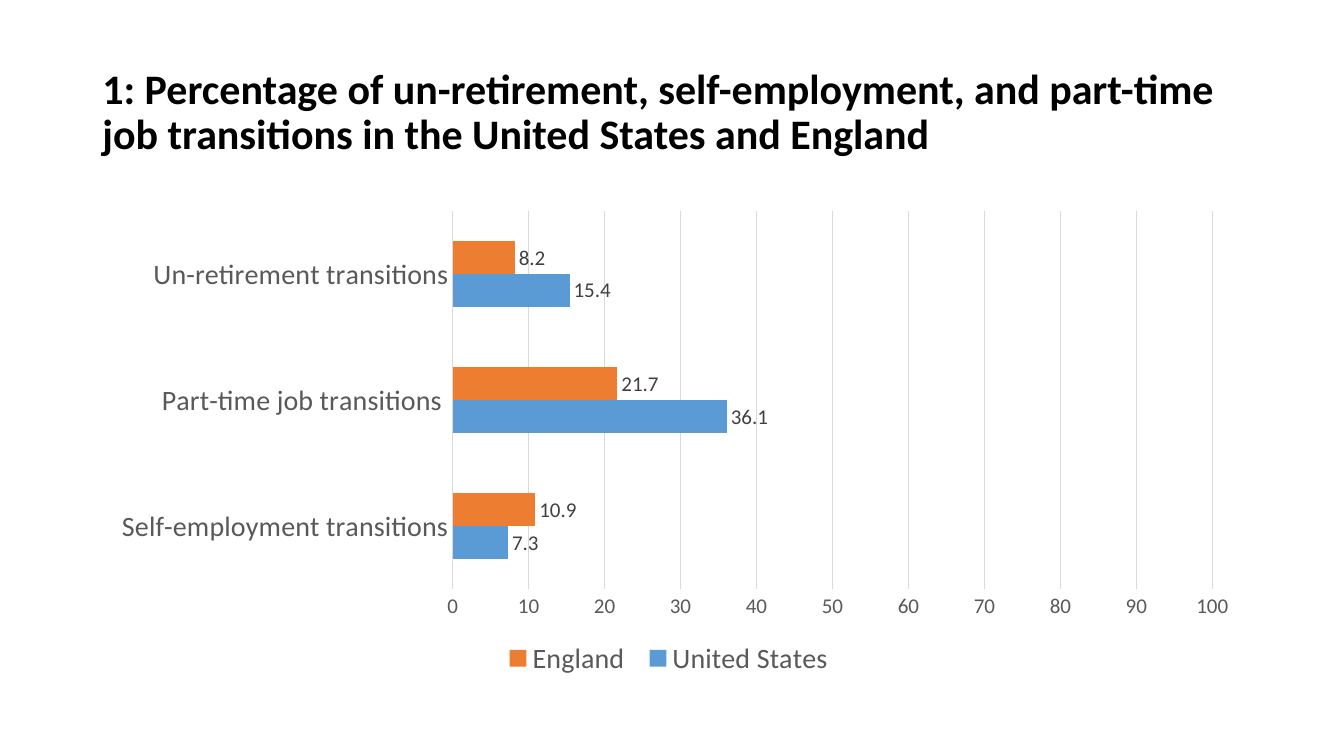
import pptx
import pptx.chart.data
import pptx.dml.color
import pptx.enum.chart
import pptx.enum.text
import pptx.util

Pt = pptx.util.Pt
FONT = "Calibri"
COLORS = {
    "title": "000000",
    "axis": "595959",
    "label": "404040",
    "grid": "D9D9D9",
    "us": "5B9BD5",
    "england": "ED7D31",
}
CATEGORIES = [" Self-employment transitions", "Part-time job transitions ", "Un-retirement transitions"]
SERIES = [
    ("United States ", (7.3, 36.1, 15.4), "us"),
    ("England ", (10.9, 21.7, 8.2), "england"),
]


def rgb(name):
    return pptx.dml.color.RGBColor.from_string(COLORS[name])


def set_font(font, size, color, bold=False):
    font.name = FONT
    font.size = Pt(size)
    font.bold = bold
    font.color.rgb = rgb(color)


prs = pptx.Presentation()
prs.slide_width, prs.slide_height = Pt(960), Pt(540)
s = prs.slides.add_slide(prs.slide_layouts[5])

# Title
title = s.shapes.title
title.left, title.top, title.width, title.height = Pt(66), Pt(28.75), Pt(828), Pt(104.4)
tf = title.text_frame
tf.text = ("1: Percentage of un-retirement, self-employment, and part-time "
           "job transitions in the United States and England")
tf.word_wrap = True
tf.auto_size = pptx.enum.text.MSO_AUTO_SIZE.NONE
tf.vertical_anchor = pptx.enum.text.MSO_ANCHOR.MIDDLE
p = tf.paragraphs[0]
p.alignment = pptx.enum.text.PP_ALIGN.LEFT
p.line_spacing = 0.9
set_font(p.font, 30, "title", bold=True)

# Bar chart
data = pptx.chart.data.CategoryChartData()
data.categories = CATEGORIES
for name, values, color in SERIES:
    data.add_series(name, values)
chart = s.shapes.add_chart(
    pptx.enum.chart.XL_CHART_TYPE.BAR_CLUSTERED,
    Pt(66), Pt(144), Pt(828), Pt(342.6), data).chart
chart.has_title = False
set_font(chart.font, 10, "title")

plot = chart.plots[0]
plot.gap_width = 182
plot.overlap = 0
plot.vary_by_categories = False
for series, (name, values, color) in zip(plot.series, SERIES):
    series.format.fill.solid()
    series.format.fill.fore_color.rgb = rgb(color)
    labels = series.data_labels
    labels.show_value = True
    labels.position = pptx.enum.chart.XL_LABEL_POSITION.OUTSIDE_END
    set_font(labels.font, 15, "label")

# Axes
cat_axis, val_axis = chart.category_axis, chart.value_axis
for axis, size in ((cat_axis, 20), (val_axis, 15)):
    axis.major_tick_mark = pptx.enum.chart.XL_TICK_MARK.NONE
    axis.minor_tick_mark = pptx.enum.chart.XL_TICK_MARK.NONE
    set_font(axis.tick_labels.font, size, "axis")
val_axis.minimum_scale, val_axis.maximum_scale = 0, 100
val_axis.major_unit = 10
val_axis.has_major_gridlines = True
val_axis.format.line.fill.background()
for line in (cat_axis.format.line, val_axis.major_gridlines.format.line):
    line.color.rgb = rgb("grid")
    line.width = Pt(0.75)

# Legend
chart.has_legend = True
chart.legend.position = pptx.enum.chart.XL_LEGEND_POSITION.BOTTOM
chart.legend.include_in_layout = False
set_font(chart.legend.font, 20, "axis")

prs.save("out.pptx")
